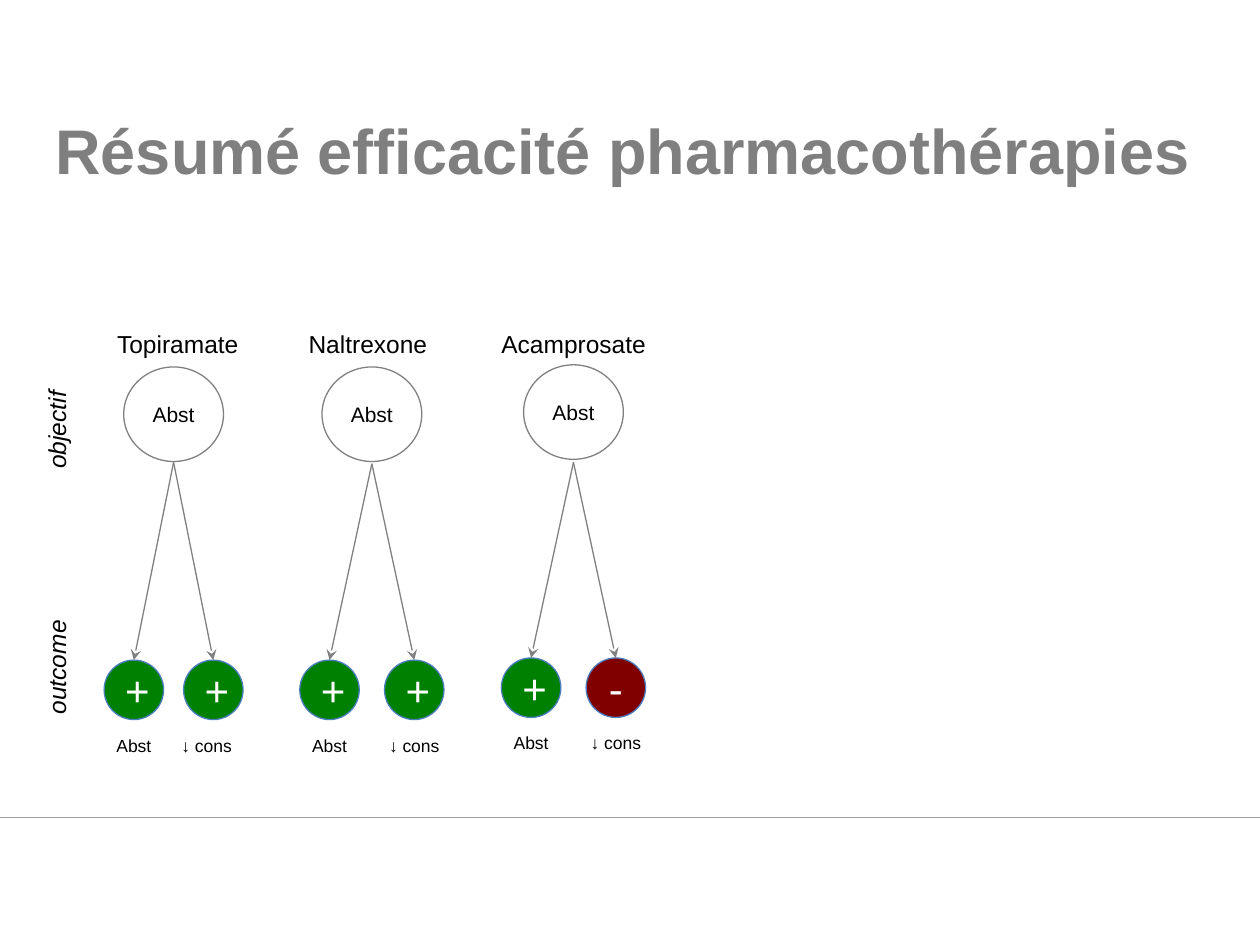
from dataclasses import dataclass

from lxml import etree
from pptx import Presentation
from pptx.dml.color import RGBColor
from pptx.enum.shapes import MSO_CONNECTOR, MSO_SHAPE
from pptx.enum.text import MSO_ANCHOR, MSO_AUTO_SIZE, PP_ALIGN
from pptx.oxml.ns import qn
from pptx.util import Pt

STRAIGHT = MSO_CONNECTOR.STRAIGHT
OVAL = MSO_SHAPE.OVAL
MIDDLE = MSO_ANCHOR.MIDDLE
FIT_SHAPE, NO_FIT = MSO_AUTO_SIZE.SHAPE_TO_FIT_TEXT, MSO_AUTO_SIZE.NONE
LEFT, CENTER = PP_ALIGN.LEFT, PP_ALIGN.CENTER

FONT = "Arial"
BLACK, WHITE, GRAY = "000000", "FFFFFF", "808080"
GREEN, RED, BLUE, TITLE_GRAY, RULE_GRAY = "008000", "800000", "4B7EBC", "7F7F7F", "A0A0A0"
HUB_WIDTH, HUB_HEIGHT, HUB_TOP = 57, 54, 209.7
OUTCOME_SIZE, OUTCOME_TOP = 34, 377.2
CAPTION_TOP, CAPTION_HEIGHT = 416.2, 19.4
NAME_TOP, NAME_HEIGHT = 184.4, 24.2


@dataclass
class Outcome:
    sign: str
    fill: str
    caption: str
    caption_width: float
    caption_shift: float = 0


@dataclass
class Therapy:
    name: str
    name_left: float
    name_width: float
    center: float
    spread: float
    arrow_top: float
    outcomes: tuple[Outcome, Outcome]
    rise: float = 0


ABSTINENCE = Outcome("+", GREEN, "Abst", 45.4)
THERAPIES = [
    Therapy("Topiramate", 59.8, 84.2, 99.2, 22.7, 264.2,
            (ABSTINENCE, Outcome("+", GREEN, "↓ cons", 72, -3.8))),
    Therapy("Naltrexone", 169.2, 82.8, 212.5, 24.2, 265,
            (ABSTINENCE, Outcome("+", GREEN, "↓ cons", 72))),
    Therapy("Acamprosate", 279.4, 97.9, 327.7, 24.2, 264.2,
            (ABSTINENCE, Outcome("-", RED, "↓ cons", 72)), 1.2),
]


def color(value: str) -> RGBColor:
    """Turn a hex string into a colour."""
    return RGBColor.from_string(value)


def write(frame, text: str, size: float, ink: str = BLACK, align=CENTER,
          bold: bool = False, italic: bool = False) -> None:
    """Write one formatted paragraph into a text frame."""
    frame.text = text
    paragraph = frame.paragraphs[0]
    paragraph.alignment = align
    font = paragraph.font
    font.name, font.size, font.bold, font.italic = FONT, Pt(size), bold, italic
    font.color.rgb = color(ink)


def add_label(slide, text: str, left: float, top: float, width: float, height: float,
              size: float, align=LEFT, wrap: bool = False, vertical: bool = False) -> None:
    """Add a text box, upright or turned to read upwards in italics."""
    frame = slide.shapes.add_textbox(Pt(left), Pt(top), Pt(width), Pt(height)).text_frame
    frame.word_wrap = wrap
    frame.auto_size = FIT_SHAPE
    write(frame, text, size, align=align, italic=vertical)
    if vertical:
        frame._txBody.bodyPr.set("vert", "vert270")


def add_circle(slide, text: str, center: float, top: float, width: float, height: float,
               size: float, fill: str, outline: str, ink: str):
    """Add an ellipse with centred text."""
    circle = slide.shapes.add_shape(OVAL, Pt(center - width / 2), Pt(top), Pt(width), Pt(height))
    circle.shadow.inherit = False
    circle.fill.solid()
    circle.fill.fore_color.rgb = color(fill)
    circle.line.color.rgb = color(outline)
    circle.line.width = Pt(0.75)
    circle.text_frame.vertical_anchor = MIDDLE
    circle.text_frame.word_wrap = True
    write(circle.text_frame, text, size, ink)
    return circle


def add_line(slide, start: tuple[float, float], end: tuple[float, float],
             ink: str, arrow: bool = False):
    """Add a thin straight line, optionally with an arrowhead."""
    line = slide.shapes.add_connector(STRAIGHT, *(Pt(value) for value in start + end))
    line.line.color.rgb = color(ink)
    line.line.width = Pt(0.75)
    if arrow:
        etree.SubElement(line.line._get_or_add_ln(), qn("a:tailEnd"), type="stealth")
    etree.SubElement(line._element.spPr, qn("a:effectLst"))
    return line


def add_therapy(slide, therapy: Therapy) -> None:
    """Draw a therapy with its goal and its two outcomes."""
    add_label(slide, therapy.name, therapy.name_left, NAME_TOP, therapy.name_width, NAME_HEIGHT, 14)
    add_circle(slide, "Abst", therapy.center, HUB_TOP - therapy.rise, HUB_WIDTH, HUB_HEIGHT,
               12, WHITE, GRAY, BLACK)
    top = OUTCOME_TOP - therapy.rise
    for side, outcome in zip((-1, 1), therapy.outcomes):
        center = therapy.center + side * therapy.spread
        result = add_circle(slide, outcome.sign, center, top, OUTCOME_SIZE, OUTCOME_SIZE,
                            24, outcome.fill, BLUE, WHITE)
        arrow = add_line(slide, (therapy.center, therapy.arrow_top), (center, top), GRAY, True)
        arrow.end_connect(result, 0)
        caption_left = center + outcome.caption_shift - outcome.caption_width / 2
        add_label(slide, outcome.caption, caption_left, CAPTION_TOP - therapy.rise,
                  outcome.caption_width, CAPTION_HEIGHT, 10, CENTER, True)


def add_title(slide, text: str) -> None:
    """Place and format the slide title."""
    title = slide.shapes.title
    title.left, title.top, title.width, title.height = Pt(31.7), Pt(40.3), Pt(666), Pt(90)
    frame = title.text_frame
    frame.margin_left = frame.margin_top = frame.margin_right = frame.margin_bottom = 0
    frame.vertical_anchor = MIDDLE
    frame.word_wrap = True
    frame.auto_size = NO_FIT
    write(frame, text, 36, TITLE_GRAY, LEFT, bold=True)


def main() -> None:
    """Build the slide and save it."""
    deck = Presentation()
    deck.slide_width, deck.slide_height = Pt(720), Pt(540)
    slide = deck.slides.add_slide(deck.slide_layouts[5])
    add_title(slide, "Résumé efficacité pharmacothérapies")
    add_line(slide, (0, 467.2), (720, 467.2), RULE_GRAY)
    add_label(slide, "objectif", 20.2, 219.6, 31.7, 55.4, 14, vertical=True)
    add_label(slide, "outcome", 20.2, 350.6, 31.7, 64.8, 14, vertical=True)
    for therapy in THERAPIES:
        add_therapy(slide, therapy)
    deck.save("out.pptx")


if __name__ == "__main__":
    main()
